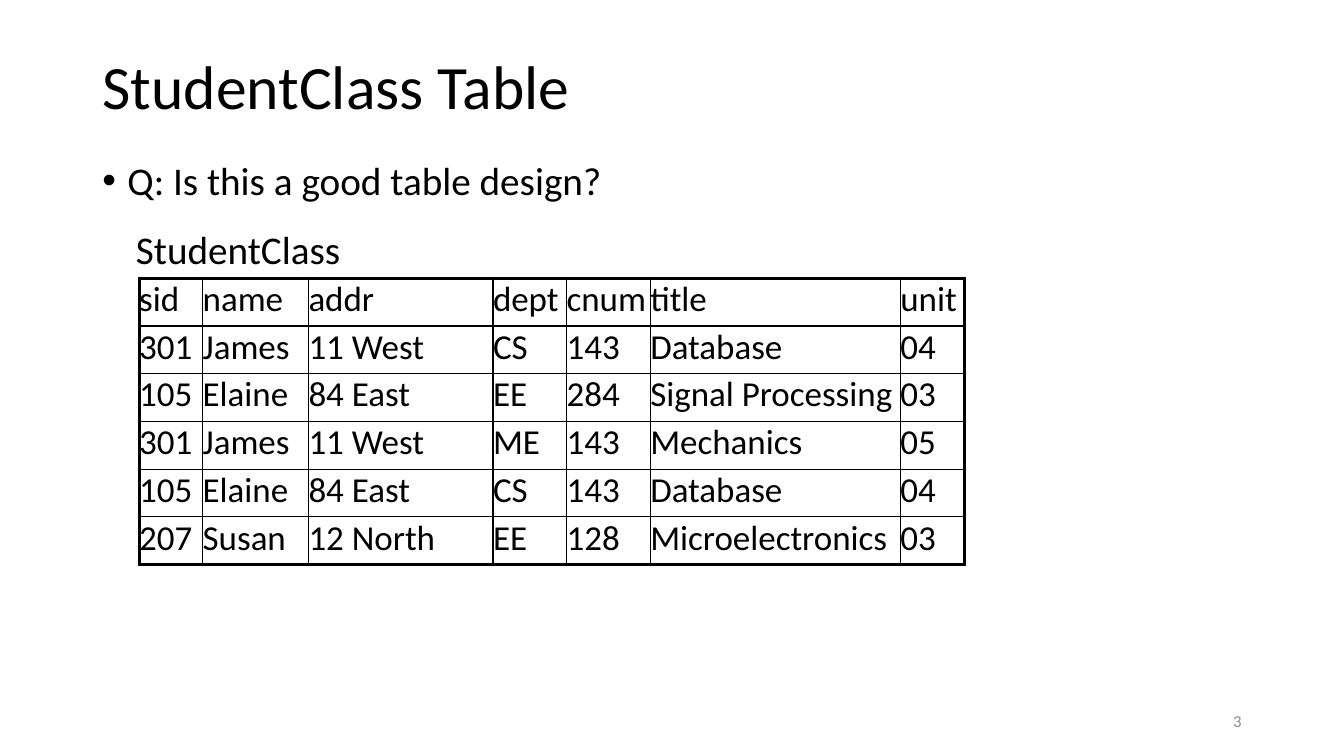
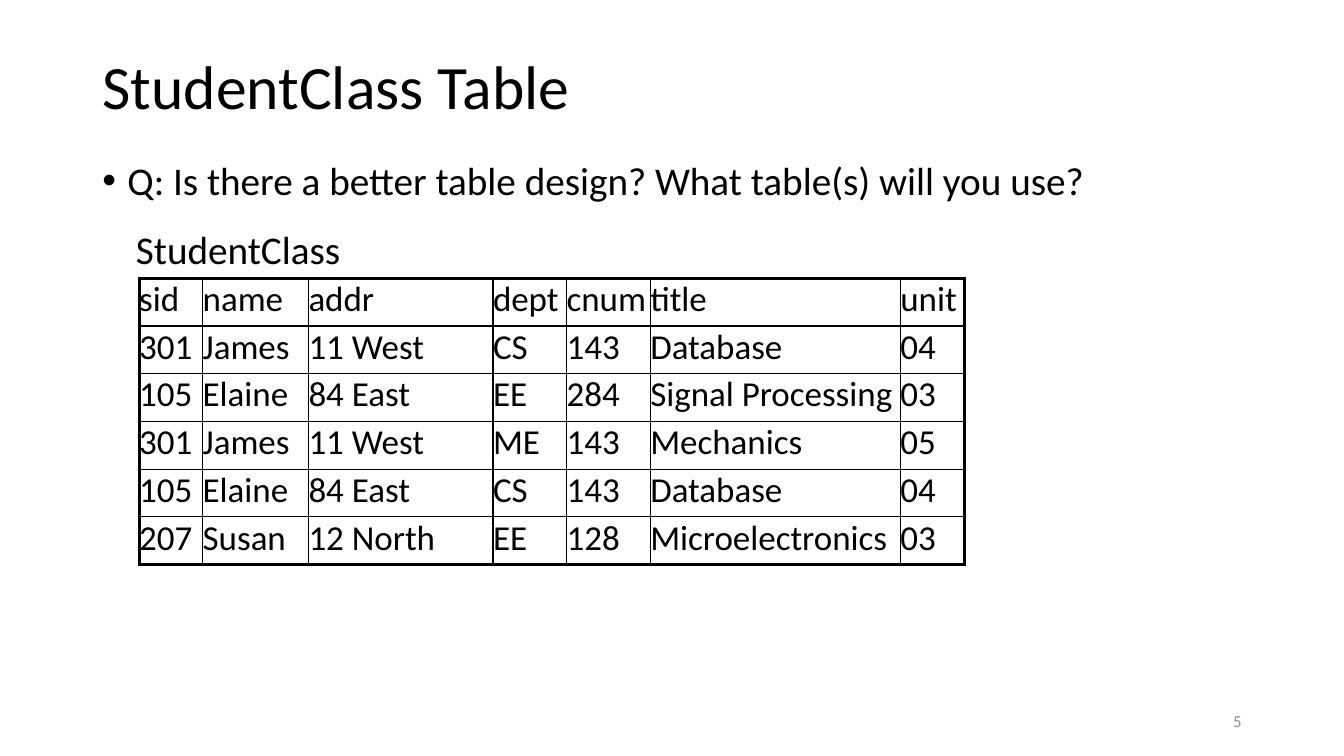
"""Build two slides that question the design of one student table."""
from lxml.etree import SubElement as Sub
from pptx import Presentation
from pptx.dml.color import RGBColor
from pptx.enum.text import MSO_ANCHOR as Anchor, MSO_AUTO_SIZE as Fit, PP_ALIGN as Align
from pptx.oxml.ns import qn
from pptx.util import Pt

BLACK = RGBColor(0x00, 0x00, 0x00)
GRAY = RGBColor(0x8C, 0x8C, 0x8C)
FONT = "Calibri"
THIN, THICK = 1, 2.25
LEFT, WIDE = 66, 828

PAGES = [
    ("Q: Is this a good table design?", "3"),
    ("Q: Is there a better table design? What table(s) will you use?", "5"),
]
COLS = [45.4, 75.6, 131.8, 52.6, 59.8, 178.6, 46]
ROW = 34.1
ROWS = [
    ["sid", "name", "addr", "dept", "cnum", "title", "unit"],
    ["301", "James", "11 West", "CS", "143", "Database", "04"],
    ["105", "Elaine", "84 East", "EE", "284", "Signal Processing", "03"],
    ["301", "James", "11 West", "ME", "143", "Mechanics", "05"],
    ["105", "Elaine", "84 East", "CS", "143", "Database", "04"],
    ["207", "Susan", "12 North", "EE", "128", "Microelectronics", "03"],
]


def write(frame, text, size, color=BLACK, align=Align.LEFT):
    para = frame.paragraphs[0]
    para.alignment = align
    run = para.add_run()
    run.text = text
    run.font.name = FONT
    run.font.size = Pt(size)
    run.font.color.rgb = color
    return para


def rule(cell, side, width):
    line = Sub(cell._tc.get_or_add_tcPr(), qn("a:ln" + side), w=str(Pt(width)))
    fill = Sub(line, qn("a:solidFill"))
    Sub(fill, qn("a:srgbClr"), val=str(BLACK))


deck = Presentation()
deck.slide_width, deck.slide_height = Pt(960), Pt(540)

for query, number in PAGES:
    slide = deck.slides.add_slide(deck.slide_layouts[5])
    shapes = slide.shapes

    title = shapes.title
    title.left, title.top, title.width, title.height = Pt(LEFT), Pt(28.8), Pt(WIDE), Pt(69.8)
    frame = title.text_frame
    frame.auto_size = Fit.NONE
    frame.vertical_anchor = Anchor.MIDDLE
    write(frame, "StudentClass Table", 44).line_spacing = 0.9

    frame = shapes.add_textbox(Pt(LEFT), Pt(111.6), Pt(WIDE), Pt(42)).text_frame
    frame.word_wrap = True
    para = write(frame, query, 28)
    para.line_spacing = 0.9
    props = para._p.get_or_add_pPr()
    props.set("marL", str(Pt(18)))
    props.set("indent", str(Pt(-18)))
    Sub(props, qn("a:buFont"), typeface="Arial")
    Sub(props, qn("a:buChar"), char="•")

    grid = shapes.add_table(
        len(ROWS), len(COLS), Pt(99.4), Pt(198.8), Pt(sum(COLS)), Pt(ROW * len(ROWS))
    ).table
    grid.first_row = grid.horz_banding = False
    for col, width in zip(grid.columns, COLS):
        col.width = Pt(width)
    for r, words in enumerate(ROWS):
        grid.rows[r].height = Pt(ROW)
        for c, word in enumerate(words):
            cell = grid.cell(r, c)
            cell.margin_left = cell.margin_right = cell.margin_top = cell.margin_bottom = 0
            edges = {
                "L": c == 0,
                "R": c == len(COLS) - 1,
                "T": r == 0,
                "B": r == len(ROWS) - 1,
            }
            for side, outer in edges.items():
                rule(cell, side, THICK if outer else THIN)
            cell.fill.background()
            write(cell.text_frame, word, 25)

    frame = shapes.add_textbox(Pt(90), Pt(157.7), Pt(162), Pt(41)).text_frame
    frame.word_wrap = False
    write(frame, "StudentClass", 28)

    frame = shapes.add_textbox(Pt(678), Pt(500.4), Pt(216), Pt(28.8)).text_frame
    frame.word_wrap = True
    frame.vertical_anchor = Anchor.MIDDLE
    write(frame, number, 12, GRAY, Align.RIGHT)

deck.save("out.pptx")
